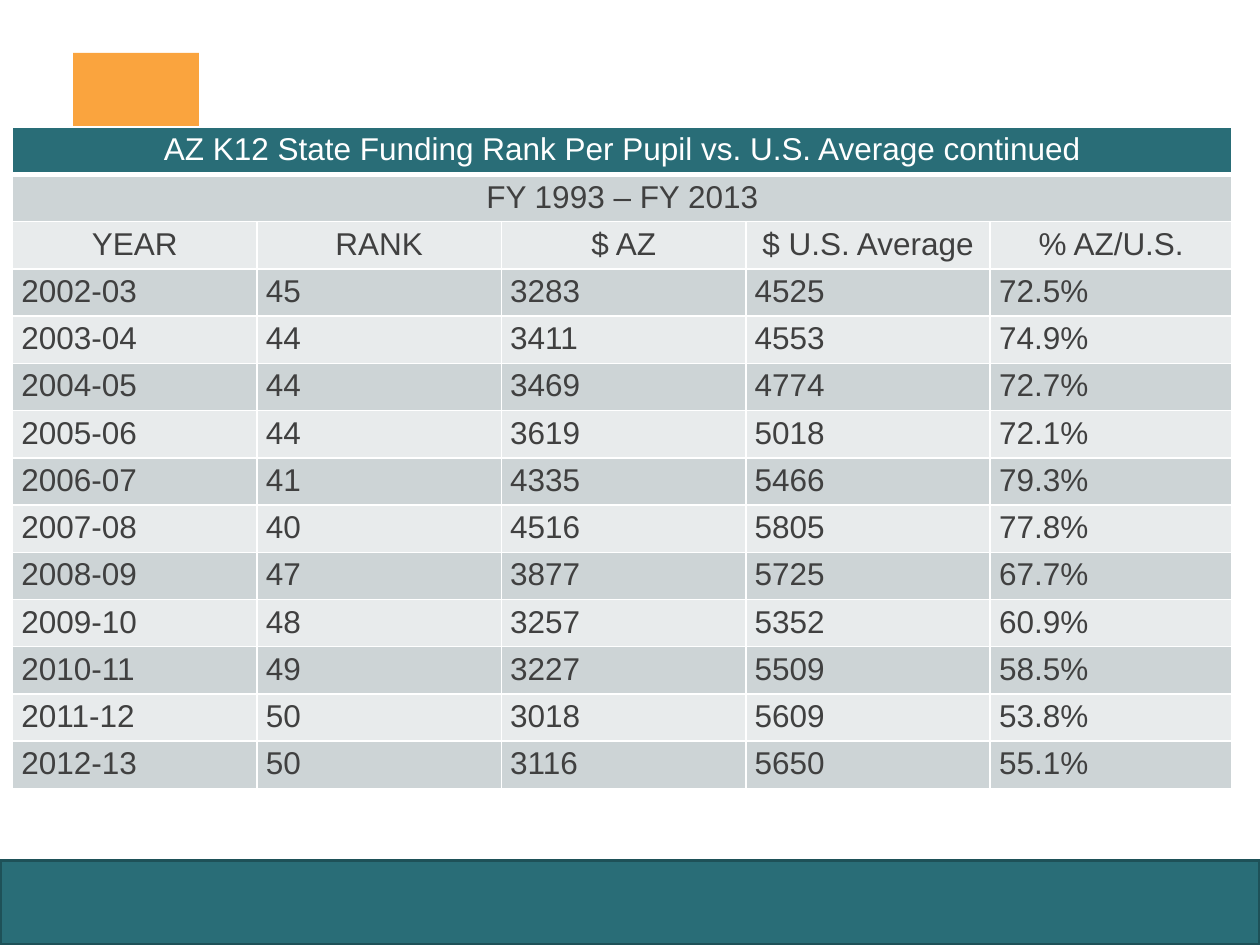
from lxml import etree
from pptx import Presentation
from pptx.dml.color import RGBColor
from pptx.enum.shapes import MSO_SHAPE
from pptx.enum.text import PP_ALIGN
from pptx.oxml.ns import qn
from pptx.util import Inches, Pt

RECTANGLE = MSO_SHAPE.RECTANGLE
CENTER, LEFT = PP_ALIGN.CENTER, PP_ALIGN.LEFT

WHITE = RGBColor(0xFF, 0xFF, 0xFF)
TEAL = RGBColor(0x29, 0x6D, 0x77)
DARK_TEAL = RGBColor(0x1E, 0x51, 0x58)
ORANGE = RGBColor(0xFA, 0xA4, 0x3E)
BAND_DARK = RGBColor(0xCD, 0xD4, 0xD6)
BAND_LIGHT = RGBColor(0xE8, 0xEB, 0xEC)
TEXT_GRAY = RGBColor(0x40, 0x40, 0x40)

# Content
TITLE = "AZ K12 State Funding Rank Per Pupil vs. U.S. Average continued"
PERIOD = "FY 1993 – FY 2013"
HEADINGS = ("YEAR", "RANK", "$ AZ", "$ U.S. Average", "% AZ/U.S.")
FUNDING = [
    ("2002-03", "45", "3283", "4525", "72.5%"),
    ("2003-04", "44", "3411", "4553", "74.9%"),
    ("2004-05", "44", "3469", "4774", "72.7%"),
    ("2005-06", "44", "3619", "5018", "72.1%"),
    ("2006-07", "41", "4335", "5466", "79.3%"),
    ("2007-08", "40", "4516", "5805", "77.8%"),
    ("2008-09", "47", "3877", "5725", "67.7%"),
    ("2009-10", "48", "3257", "5352", "60.9%"),
    ("2010-11", "49", "3227", "5509", "58.5%"),
    ("2011-12", "50", "3018", "5609", "53.8%"),
    ("2012-13", "50", "3116", "5650", "55.1%"),
]
ROWS = [(TITLE,), (PERIOD,), HEADINGS, *FUNDING]
HEADER_ROWS = 3
COLUMN_WIDTHS = (1.94, 1.94, 1.94, 1.94, 1.92)
TABLE_HEIGHT = 5.25


def add_block(page, left, top, width, height, color):
    block = page.shapes.add_shape(
        RECTANGLE, Inches(left), Inches(top), Inches(width), Inches(height))
    block.shadow.inherit = False
    block.fill.solid()
    block.fill.fore_color.rgb = color
    block.line.fill.background()
    return block


def add_borders(cell, top, bottom):
    properties = cell._tc.get_or_add_tcPr()
    for side, width in (("L", 1), ("R", 1), ("T", top), ("B", bottom)):
        line = etree.SubElement(properties, qn(f"a:ln{side}"), w=str(Pt(width)))
        fill = etree.SubElement(line, qn("a:solidFill"))
        etree.SubElement(fill, qn("a:srgbClr"), val=str(WHITE))


def style_cell(cell, row):
    cell.margin_left = cell.margin_right = Inches(0.07)
    cell.margin_top = cell.margin_bottom = Inches(0.04)
    add_borders(cell, top=3 if row == 1 else 1, bottom=3 if row == 0 else 1)
    cell.fill.solid()
    band = BAND_DARK if row % 2 else BAND_LIGHT
    cell.fill.fore_color.rgb = TEAL if row == 0 else band
    para = cell.text_frame.paragraphs[0]
    para.alignment = CENTER if row < HEADER_ROWS else LEFT
    para.font.size = Pt(18)
    for span in para.runs:
        span.font.name = "Arial"
        span.font.size = Pt(18)
        span.font.bold = False
        span.font.color.rgb = WHITE if row == 0 else TEXT_GRAY


def add_funding_table(page):
    frame = page.shapes.add_table(
        len(ROWS), len(COLUMN_WIDTHS), Inches(0.1), Inches(1.01),
        Inches(sum(COLUMN_WIDTHS)), Inches(TABLE_HEIGHT))
    table = frame.table
    for column, width in zip(table.columns, COLUMN_WIDTHS):
        column.width = Inches(width)
    for row, texts in enumerate(ROWS):
        table.rows[row].height = Inches(TABLE_HEIGHT / len(ROWS))
        for column, text in enumerate(texts):
            table.cell(row, column).text_frame.text = text
        for cell in table.rows[row].cells:
            style_cell(cell, row)
        # A single text spans the full width
        if len(texts) == 1:
            table.cell(row, 0).merge(table.cell(row, len(COLUMN_WIDTHS) - 1))


def main():
    deck = Presentation()
    deck.slide_width, deck.slide_height = Inches(10), Inches(7.5)
    page = deck.slides.add_slide(deck.slide_layouts[6])

    # Footer band and accent square
    footer = add_block(page, 0, 6.83, 10, 0.67, TEAL)
    footer.line.color.rgb = DARK_TEAL
    footer.line.width = Pt(2)
    add_block(page, 0.58, 0.42, 1, 1, ORANGE)

    add_funding_table(page)
    deck.save("out.pptx")


if __name__ == "__main__":
    main()
